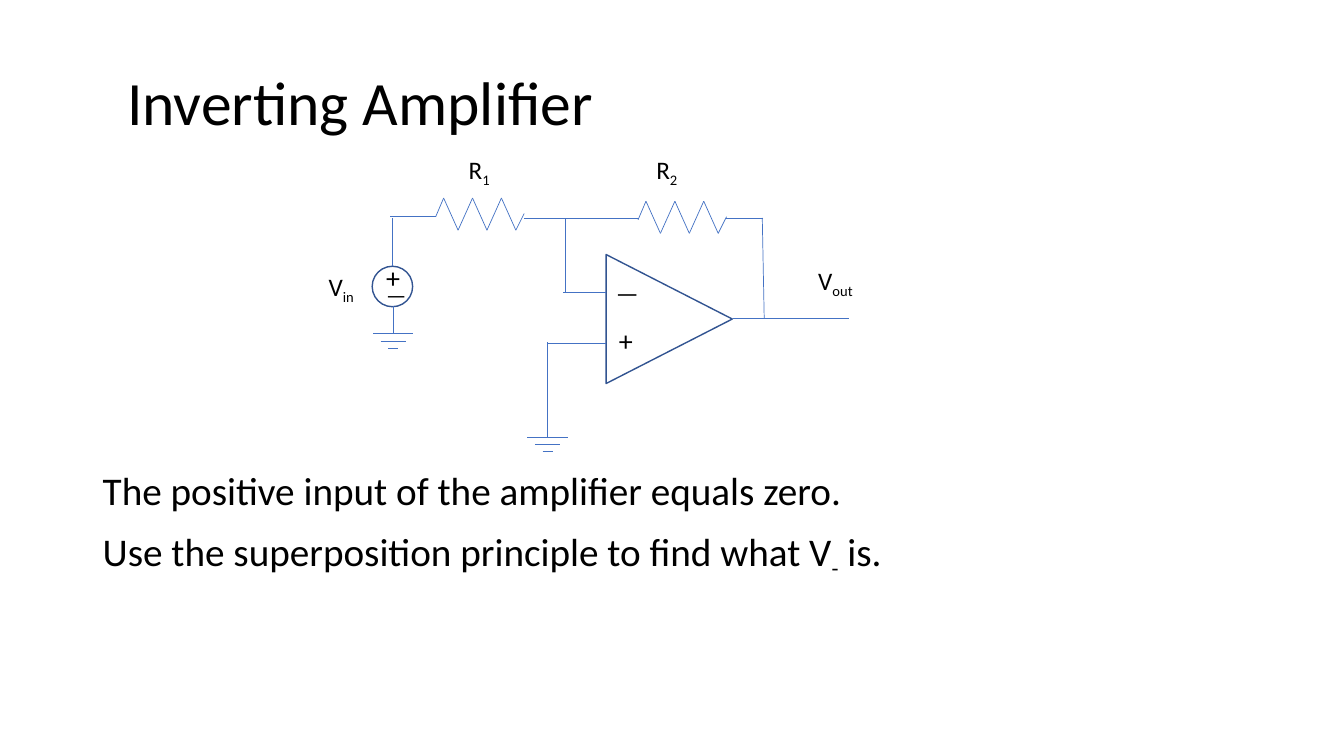
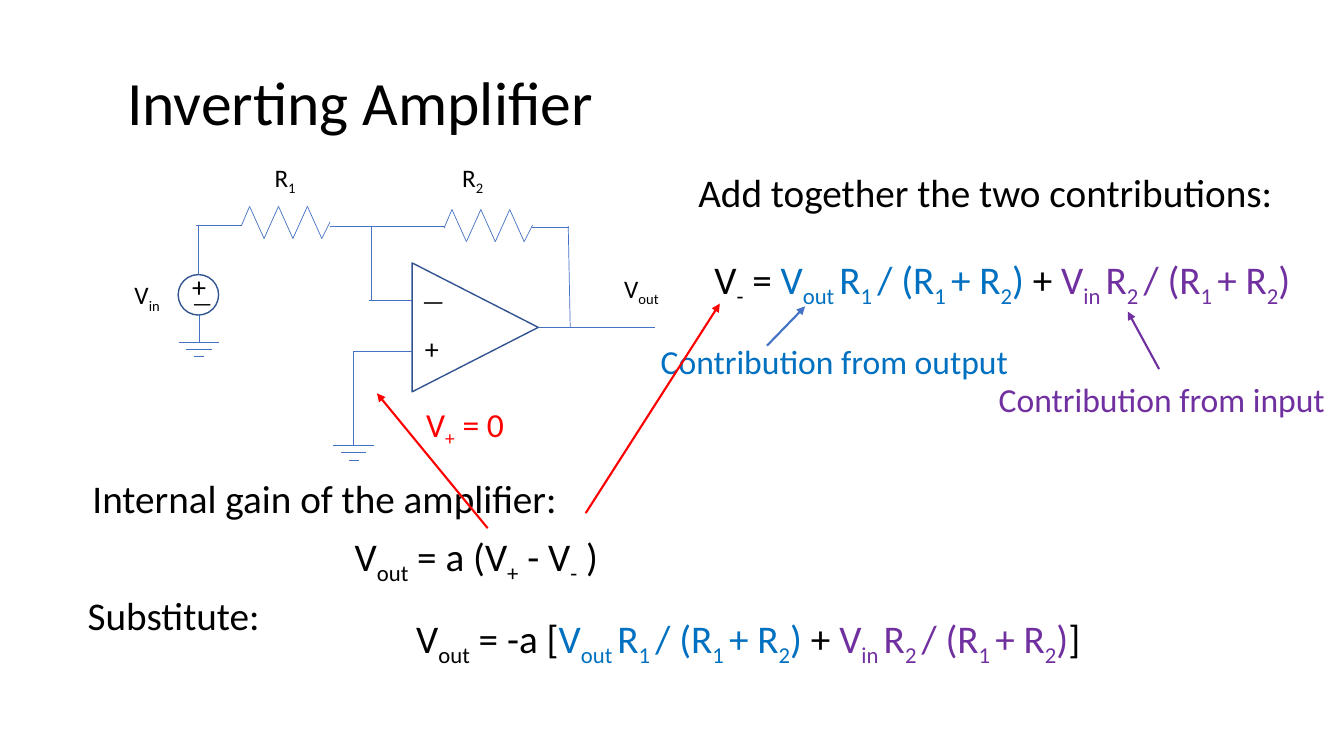
from itertools import pairwise

from lxml.etree import SubElement
from pptx import Presentation
from pptx.dml.color import RGBColor as RGB
from pptx.enum.shapes import MSO_CONNECTOR as CONN, MSO_SHAPE as SHAPE
from pptx.enum.text import MSO_ANCHOR as ANCHOR, MSO_AUTO_SIZE as AUTO, PP_ALIGN as ALIGN
from pptx.oxml.ns import qn
from pptx.util import Cm, Pt

FONT = "Calibri"
COLORS = {
    "ink": "000000",
    "wire": "4472C4",
    "outline": "325491",
    "output": "0070C0",
    "input": "7030A0",
    "substitution": "FF0000",
}


def rgb(name):
    return RGB.from_string(COLORS[name])


def cm_box(x, y, w, h):
    return Cm(x), Cm(y), Cm(w), Cm(h)


def add_runs(p, runs, size, color="ink"):
    for text, *style in runs:
        r = p.add_run()
        r.text = text
        r.font.name = FONT
        r.font.size = Pt(size)
        r.font.color.rgb = rgb(style[1] if len(style) > 1 else color)
        if style and style[0]:
            r._r.get_or_add_rPr().set("baseline", "-25000")


def add_text(shapes, box, paragraphs, size=28, color="ink", align=ALIGN.LEFT, spaced=True):
    tf = shapes.add_textbox(*cm_box(*box)).text_frame
    tf.word_wrap = True
    for i, runs in enumerate(paragraphs):
        p = tf.paragraphs[0] if i == 0 else tf.add_paragraph()
        p.alignment = align
        if spaced:
            p.line_spacing = 0.9
            p.space_before = Pt(10)
        add_runs(p, runs, size, color)


def add_line(shapes, start, end, color="wire", width=0.5, arrow=False):
    line = shapes.add_connector(CONN.STRAIGHT, *map(Cm, (*start, *end)))
    line.line.color.rgb = rgb(color)
    line.line.width = Pt(width)
    if arrow:
        SubElement(line.line._get_or_add_ln(), qn("a:tailEnd"), type="triangle")
    SubElement(line._element.spPr, qn("a:effectLst"))


def add_outline(shapes, kind, box, rotation=0):
    sp = shapes.add_shape(kind, *cm_box(*box))
    sp.rotation = rotation
    sp.shadow.inherit = False
    sp.fill.background()
    sp.line.color.rgb = rgb("outline")
    sp.line.width = Pt(1)


def add_resistor(shapes, x, y):
    zigzag = [(x + 0.2 + 0.364 * i, y + (0.34 if i % 2 else -0.47)) for i in range(6)]
    for start, end in pairwise([(x, y), *zigzag, (x + 2.23, y - 0.08)]):
        add_line(shapes, start, end)


def add_ground(shapes, x, top, bottom):
    add_line(shapes, (x, bottom), (x, top))
    for i, width in enumerate((1.02, 0.64, 0.25)):
        y = bottom + 0.18 * i
        add_line(shapes, (x - width / 2, y), (x + width / 2, y))


def add_circuit(s, x, y):
    shapes = s.shapes.add_group_shape().shapes
    add_outline(shapes, SHAPE.ISOSCELES_TRIANGLE, (x + 7.21, y + 2.69, 3.25, 3.18), 90)
    add_outline(shapes, SHAPE.OVAL, (x + 1.35, y + 2.95, 1.02, 1.02))

    wires = [
        ((6.17, 3.61), (7.24, 3.61)),
        ((5.77, 4.88), (7.24, 4.88)),
        ((10.44, 4.27), (13.36, 4.27)),
        ((5.18, 1.73), (8.08, 1.73)),
        ((6.22, 3.61), (6.22, 1.73)),
        ((1.85, 2.95), (1.85, 1.73)),
        ((2.95, 1.7), (1.8, 1.7)),
        ((11.23, 4.27), (11.18, 1.73)),
        ((11.2, 1.75), (10.26, 1.75)),
    ]
    for (x1, y1), (x2, y2) in wires:
        add_line(shapes, (x + x1, y + y1), (x + x2, y + y2))

    add_resistor(shapes, x + 2.95, y + 1.7)
    add_resistor(shapes, x + 8.05, y + 1.78)
    add_ground(shapes, x + 1.88, y + 3.96, y + 4.65)
    add_ground(shapes, x + 5.77, y + 4.87, y + 7.26)

    signs = [
        ("—", 18, 7.24, 3.1),
        ("+", 20, 7.32, 4.27),
        ("+", 20, 1.45, 2.69),
        ("—", 16, 1.45, 3.2),
    ]
    for sign, size, dx, dy in signs:
        add_text(shapes, (x + dx, y + dy, 0.86, 1.02), [[(sign,)]], size, spaced=False)

    labels = [
        ("V", "in", 0, 2.95),
        ("V", "out", 12.34, 2.79),
        ("R", "1", 3.53, 0),
        ("R", "2", 8.26, 0),
    ]
    for name, index, dx, dy in labels:
        box = (x + dx, y + dy, 1.45, 1.02)
        add_text(shapes, box, [[(name,), (index, True)]], 18, spaced=False)


def divider_term(source, resistor, color):
    runs = [
        ("V", False), (f"{source} ", True), ("R", False), (f"{resistor} ", True),
        ("/ (R", False), ("1 ", True), ("+ R", False), ("2", True), (")", False),
    ]
    return [(text, sub, color) for text, sub in runs]


SUPERPOSITION = [
    *divider_term("out", "1", "output"),
    (" + ",),
    *divider_term("in", "2", "input"),
]


def add_contributions(s, x, y):
    sh = s.shapes
    add_text(sh, (x + 0.95, y, 15.11, 1.6), [[("Add together the two contributions:",)]])
    formula = [("V",), ("-", True), (" = ",), *SUPERPOSITION]
    add_text(sh, (x + 0.54, y + 2.08, 16.64, 1.78), [formula], align=ALIGN.CENTER)
    add_text(sh, (x, y + 4.35, 9.96, 1.6), [[("Contribution from output",)]], 24, "output")
    add_text(sh, (x + 8.52, y + 5.29, 8.9, 1.6), [[("Contribution from input",)]], 24, "input")
    add_line(sh, (x + 2.93, y + 4.47), (x + 3.89, y + 3.48), "wire", 1.5, True)
    add_line(sh, (x + 12.81, y + 5.06), (x + 12.02, y + 3.61), "input", 1.5, True)


def add_gain(s, x, y):
    sh = s.shapes
    v_out = [("V",), ("out", True)]
    gain = [*v_out, (" = a (V",), ("+", True), (" - V",), ("-", True), (" )",)]
    result = [*v_out, (" = -a [",), *SUPERPOSITION, ("]",)]
    add_text(sh, (x + 0.12, y + 1.9, 15.11, 1.6), [[("Internal gain of the amplifier:",)]])
    add_text(sh, (x + 6.73, y + 3.25, 10.06, 1.6), [gain])
    add_text(sh, (x, y + 4.85, 6.17, 1.6), [[("Substitute:",)]])
    add_text(sh, (x + 8.28, y + 5.31, 18.97, 1.6), [result])
    zero = [("V",), ("+", True), (" = 0",)]
    add_text(sh, (x + 8.53, y, 2.92, 1.27), [zero], 24, "substitution")
    for start, end in [((10.33, 3.25), (7.54, -0.15)), ((12.8, 2.87), (16.18, -2.41))]:
        add_line(sh, (x + start[0], y + start[1]), (x + end[0], y + end[1]),
                 "substitution", 1.5, True)


def add_titled_slide(prs, title):
    s = prs.slides.add_slide(prs.slide_layouts[5])
    sp = s.shapes.title
    sp.left, sp.top, sp.width, sp.height = cm_box(2.95, 0.81, 29.21, 3.68)
    tf = sp.text_frame
    tf.auto_size = AUTO.NONE
    tf.vertical_anchor = ANCHOR.MIDDLE
    p = tf.paragraphs[0]
    p.alignment = ALIGN.LEFT
    p.line_spacing = 0.9
    add_runs(p, [(title,)], 44)
    return s


def build_question(prs):
    s = add_titled_slide(prs, "Inverting Amplifier")
    add_circuit(s, 8.03, 3.76)
    add_text(s.shapes, (2.34, 11.76, 29.21, 6.25), [
        [("The positive input of the amplifier equals zero.",)],
        [("Use the superposition principle to find what V",), ("-", True), (" is.",)],
    ])


def build_solution(prs):
    s = add_titled_slide(prs, "Inverting Amplifier")
    add_contributions(s, 16.4, 4.24)
    add_circuit(s, 3.14, 3.97)
    add_gain(s, 1.96, 10.06)


def main():
    prs = Presentation()
    prs.slide_width, prs.slide_height = Cm(33.87), Cm(19.05)
    build_question(prs)
    build_solution(prs)
    prs.save("out.pptx")


if __name__ == "__main__":
    main()
